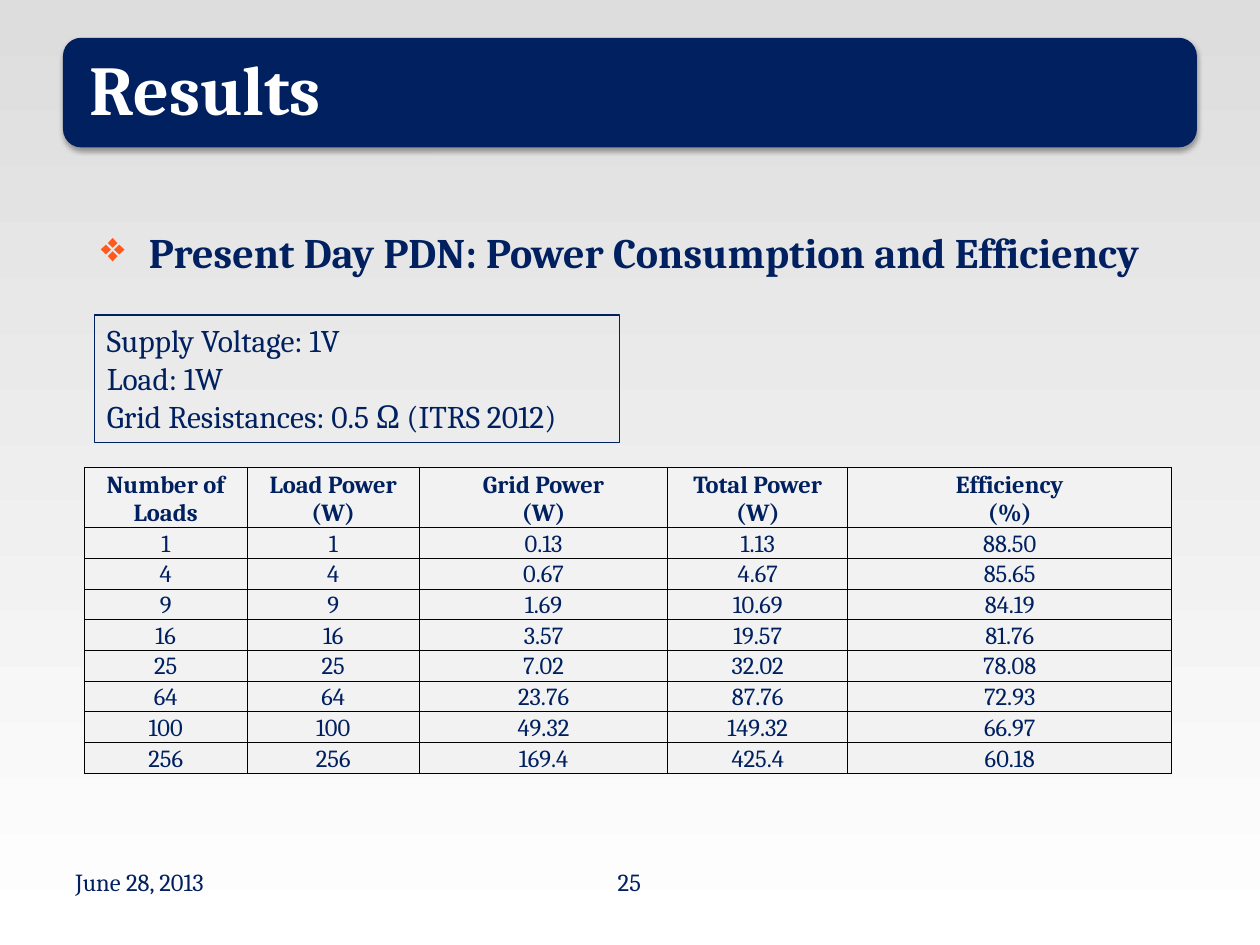
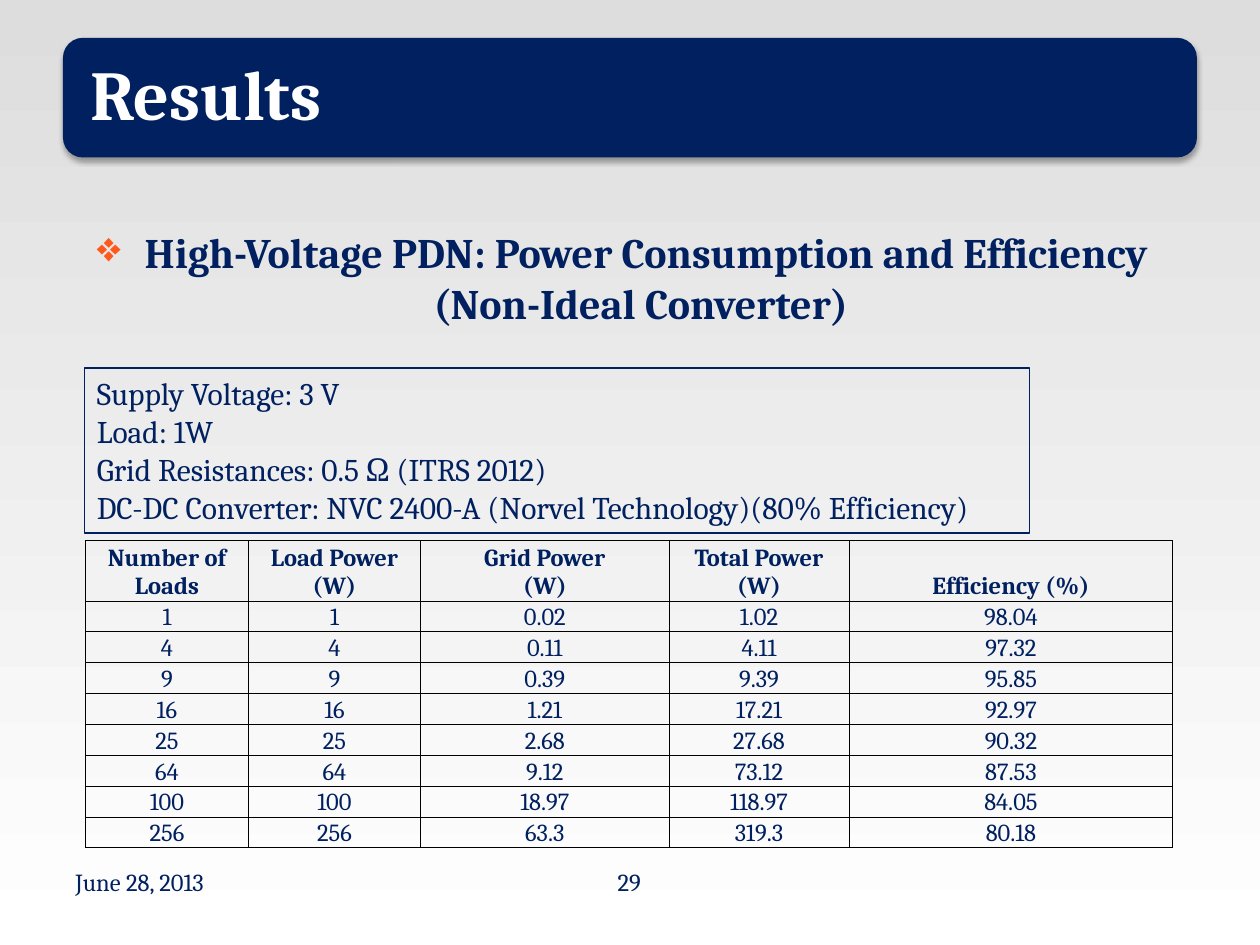
from lxml import etree
from pptx import Presentation
from pptx.dml.color import RGBColor
from pptx.enum import shapes, text
from pptx.oxml import ns
from pptx.util import Inches, Pt

NAVY = RGBColor(0x00, 0x20, 0x60)
WHITE = RGBColor(0xFF, 0xFF, 0xFF)
SILVER = RGBColor(0xDD, 0xDD, 0xDD)
PALE_GREY = RGBColor(0xF2, 0xF2, 0xF2)
BLACK = RGBColor(0x00, 0x00, 0x00)
ORANGE = RGBColor(0xFF, 0x58, 0x1D)

LEFT, CENTER = text.PP_ALIGN.LEFT, text.PP_ALIGN.CENTER
COLUMN_WIDTHS = [1.29, 1.37, 1.97, 1.43, 2.57]
LOAD_COUNTS = [1, 4, 9, 16, 25, 64, 100, 256]


def add_xml(parent, tag, **attributes):
    return etree.SubElement(parent, ns.qn(tag), attributes)


class Deck:
    font_name = "Cambria"
    bullet_indent = Inches(0.38)

    def __init__(self):
        self.presentation = Presentation()
        self.presentation.slide_width = Inches(10)
        self.presentation.slide_height = Inches(7.5)
        self.slide = None

    def style(self, paragraph, size, color=NAVY, bold=False, align=LEFT):
        paragraph.alignment = align
        for run in paragraph.runs:
            run.font.name = self.font_name
            run.font.size = Pt(size)
            run.font.bold = bold
            run.font.color.rgb = color

    def start_slide(self, title, band_height, number):
        self.slide = self.presentation.slides.add_slide(self.presentation.slide_layouts[6])
        fill = self.slide.background.fill
        fill.gradient()
        fill.gradient_angle = 270
        for stop, color, position in zip(fill.gradient_stops, (SILVER, WHITE), (0, 1)):
            stop.color.rgb = color
            stop.position = position
        self.title_band(title, band_height)
        self.footer("June 28, 2013", 0.5, LEFT)
        self.footer(str(number), 3.83, CENTER)

    def title_band(self, title, height):
        band = self.slide.shapes.add_shape(
            shapes.MSO_SHAPE.ROUNDED_RECTANGLE,
            Inches(0.5), Inches(0.3), Inches(9), Inches(height))
        band.fill.solid()
        band.fill.fore_color.rgb = NAVY
        band.line.fill.background()
        self.soft_shadow(band)
        frame = band.text_frame
        frame.margin_left = frame.margin_right = Inches(0.17)
        frame.vertical_anchor = text.MSO_ANCHOR.MIDDLE
        frame.text = title
        frame.paragraphs[0].line_spacing = 0.9
        self.style(frame.paragraphs[0], 40, WHITE, bold=True)

    def soft_shadow(self, shape):
        shape.shadow.inherit = False
        effects = shape._element.spPr.find(ns.qn("a:effectLst"))
        shadow = add_xml(effects, "a:outerShdw", blurRad=str(Pt(3.1)), dist=str(Pt(1.8)),
                         dir="5400000", rotWithShape="0")
        color = add_xml(shadow, "a:srgbClr", val=str(BLACK))
        add_xml(color, "a:alpha", val="35000")

    def text_box(self, content, left, top, width, height, wrap=True):
        box = self.slide.shapes.add_textbox(
            Inches(left), Inches(top), Inches(width), Inches(height))
        box.text_frame.word_wrap = wrap
        box.text_frame.text = content
        return box.text_frame.paragraphs

    def footer(self, content, left, align):
        self.style(self.text_box(content, left, 6.83, 2.33, 0.52)[0], 14, align=align)

    def heading(self, content, left, width, align, wrap=True):
        first, *others = self.text_box(content, left, 1.75, width, 0.91, wrap)
        self.add_bullet(first)
        self.style(first, 24, bold=True, align=align)
        for paragraph in others:
            self.style(paragraph, 24, bold=True, align=CENTER)

    def add_bullet(self, paragraph):
        properties = paragraph._p.get_or_add_pPr()
        properties.set("marL", str(self.bullet_indent))
        properties.set("indent", str(-self.bullet_indent))
        add_xml(add_xml(properties, "a:buClr"), "a:srgbClr", val=str(ORANGE))
        add_xml(properties, "a:buChar", char="❖")

    def parameter_box(self, lines, left, top, width, height):
        box = self.slide.shapes.add_shape(
            shapes.MSO_SHAPE.RECTANGLE,
            Inches(left), Inches(top), Inches(width), Inches(height))
        box.shadow.inherit = False
        box.fill.background()
        box.line.color.rgb = NAVY
        box.line.width = Pt(0.75)
        box.text_frame.vertical_anchor = text.MSO_ANCHOR.TOP
        box.text_frame.text = "\n".join(lines)
        for paragraph in box.text_frame.paragraphs:
            self.style(paragraph, 18)

    def results_table(self, headers, results, left, top, height, header_height, fill=None):
        rows = [headers] + [(count, count, *result)
                            for count, result in zip(LOAD_COUNTS, results)]
        table = self.slide.shapes.add_table(
            len(rows), len(headers), Inches(left), Inches(top),
            Inches(sum(COLUMN_WIDTHS)), Inches(height)).table
        table.first_row = table.horz_banding = False
        for column, width in zip(table.columns, COLUMN_WIDTHS):
            column.width = Inches(width)
        body_height = (height - header_height) / len(results)
        for index, values in enumerate(rows):
            table.rows[index].height = Inches(body_height if index else header_height)
            for cell, value in zip(table.rows[index].cells, values):
                self.table_cell(cell, str(value), index == 0, fill)

    def table_cell(self, cell, value, bold, fill):
        cell.margin_left = cell.margin_right = cell.margin_top = Inches(0.01)
        cell.margin_bottom = 0
        cell.vertical_anchor = text.MSO_ANCHOR.BOTTOM
        cell.text = value
        for paragraph in cell.text_frame.paragraphs:
            self.style(paragraph, 14, bold=bold, align=CENTER)
        for side in ("L", "R", "T", "B"):
            border = add_xml(cell._tc.get_or_add_tcPr(), f"a:ln{side}", w=str(Pt(0.5)))
            add_xml(add_xml(border, "a:solidFill"), "a:srgbClr", val=str(BLACK))
        if fill is None:
            cell.fill.background()
        else:
            cell.fill.solid()
            cell.fill.fore_color.rgb = fill


def add_present_day_slide(deck):
    deck.start_slide("Results", 0.87, 25)
    deck.results_table(
        ["Number of Loads", "Load Power\n(W)", "Grid Power\n(W)", "Total Power\n(W)",
         "Efficiency\n(%)"],
        [("0.13", "1.13", "88.50"), ("0.67", "4.67", "85.65"),
         ("1.69", "10.69", "84.19"), ("3.57", "19.57", "81.76"),
         ("7.02", "32.02", "78.08"), ("23.76", "87.76", "72.93"),
         ("49.32", "149.32", "66.97"), ("169.4", "425.4", "60.18")],
        0.67, 3.71, 2.34, 0.46, PALE_GREY)
    deck.heading("Present Day PDN: Power Consumption and Efficiency",
                 0.57, 8.7, CENTER, wrap=False)
    deck.parameter_box(
        ["Supply Voltage: 1V", "Load: 1W", "Grid Resistances: 0.5 Ω (ITRS 2012)"],
        0.75, 2.5, 4.17, 1.01)


def add_high_voltage_slide(deck):
    deck.start_slide("Results", 0.95, 29)
    deck.heading("High-Voltage PDN: Power Consumption and Efficiency\n(Non-Ideal Converter)",
                 0.67, 8.83, LEFT)
    deck.results_table(
        ["Number of Loads", "Load Power (W)", "Grid Power\n(W)", "Total Power (W)",
         "Efficiency (%)"],
        [("0.02", "1.02", "98.04"), ("0.11", "4.11", "97.32"),
         ("0.39", "9.39", "95.85"), ("1.21", "17.21", "92.97"),
         ("2.68", "27.68", "90.32"), ("9.12", "73.12", "87.53"),
         ("18.97", "118.97", "84.05"), ("63.3", "319.3", "80.18")],
        0.68, 4.29, 2.44, 0.48)
    deck.parameter_box(
        ["Supply Voltage: 3 V", "Load: 1W", "Grid Resistances: 0.5 Ω (ITRS 2012)",
         "DC-DC Converter: NVC 2400-A (Norvel Technology)(80% Efficiency)"],
        0.67, 2.92, 7.5, 1.31)


def main():
    deck = Deck()
    add_present_day_slide(deck)
    add_high_voltage_slide(deck)
    deck.presentation.save("out.pptx")


if __name__ == "__main__":
    main()
